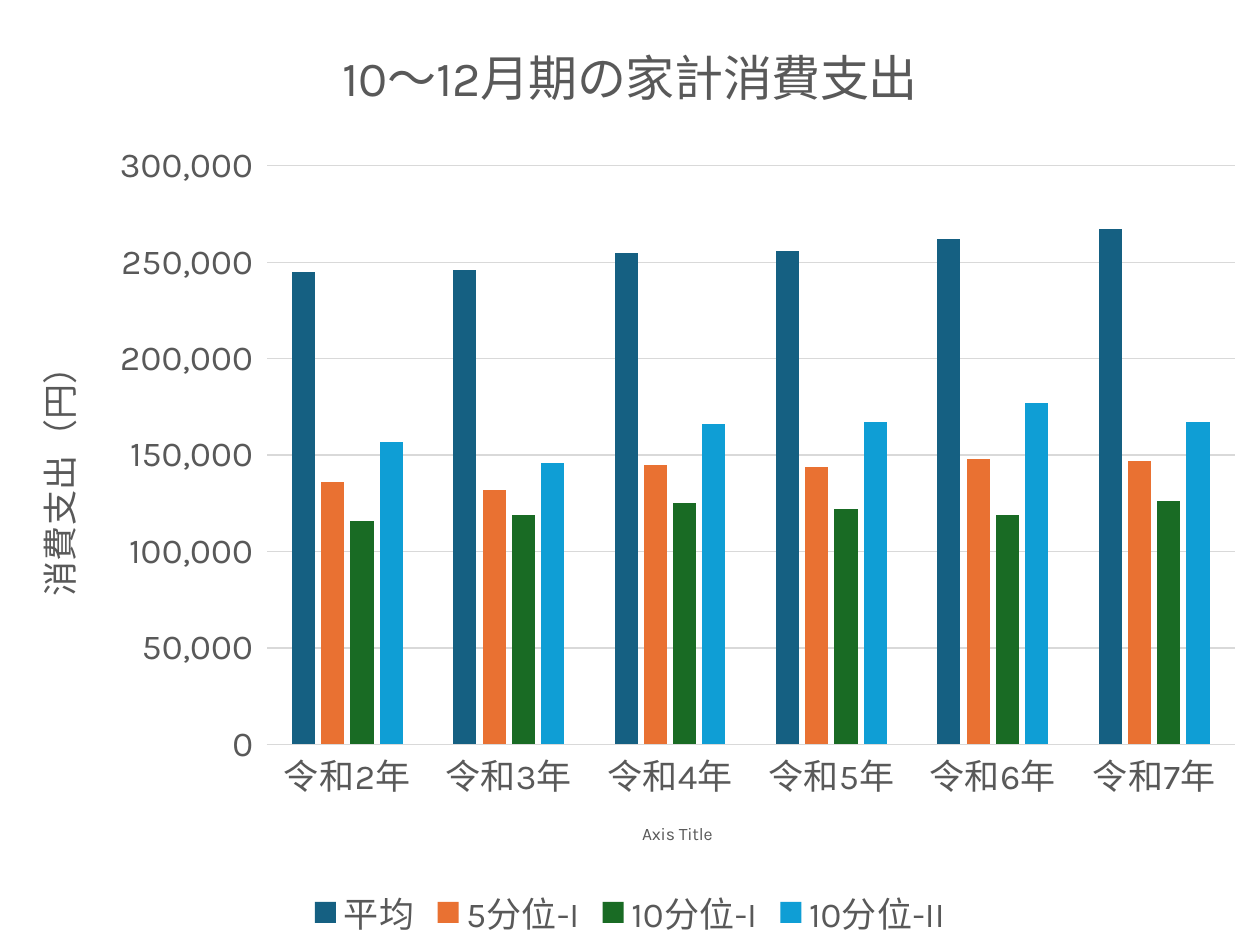
import pptx
import pptx.chart.data
import pptx.dml.color
import pptx.enum.chart
import pptx.util
from pptx.util import Inches

FONT = "Karla"
GRAY = "595959"
GRID = "D9D9D9"
CATEGORIES = [f"令和{year}年" for year in range(2, 8)]
SERIES = [
    ("平均", "156082", [245000, 246000, 255000, 256000, 262000, 267000]),
    ("5分位-I", "E97132", [136000, 132000, 145000, 144000, 148000, 147000]),
    ("10分位-I", "196B24", [116000, 119000, 125000, 122000, 119000, 126000]),
    ("10分位-II", "0F9ED5", [157000, 146000, 166000, 167000, 177000, 167000]),
]


def rgb(color):
    return pptx.dml.color.RGBColor.from_string(color)


def style_font(font, size=20, color=GRAY):
    font.name = FONT
    font.size = pptx.util.Pt(size)
    font.bold = False
    font.color.rgb = rgb(color)


def style_line(line):
    line.color.rgb = rgb(GRID)
    line.width = pptx.util.Pt(0.75)


def set_title(owner, text, **fmt):
    """Give a chart or an axis a formatted title."""
    p = owner.text_frame.paragraphs[0]
    r = p.add_run()
    r.text = text
    style_font(p.font, **fmt)
    style_font(r.font, **fmt)


def add_spending_chart(s, left, top, width, height):
    enums = pptx.enum.chart
    data = pptx.chart.data.CategoryChartData(number_format="#,##0")
    data.categories = CATEGORIES
    for name, _, values in SERIES:
        data.add_series(name, values)
    chart = s.shapes.add_chart(enums.XL_CHART_TYPE.COLUMN_CLUSTERED,
                               left, top, width, height, data).chart
    style_font(chart.font, size=10, color="000000")
    set_title(chart.chart_title, "10〜12月期の家計消費支出", size=28)
    chart.chart_title.include_in_layout = False

    # Columns
    plot = chart.plots[0]
    plot.gap_width = 219
    plot.overlap = -27
    plot.vary_by_categories = False
    for series, (_, color, _) in zip(plot.series, SERIES):
        series.format.fill.solid()
        series.format.fill.fore_color.rgb = rgb(color)

    # Axes
    for axis in (chart.category_axis, chart.value_axis):
        axis.major_tick_mark = enums.XL_TICK_MARK.NONE
        axis.minor_tick_mark = enums.XL_TICK_MARK.NONE
        style_font(axis.tick_labels.font)
    style_line(chart.category_axis.format.line)
    set_title(chart.category_axis.axis_title, "Axis Title", size=10)

    value_axis = chart.value_axis
    value_axis.format.line.fill.background()
    style_line(value_axis.major_gridlines.format.line)
    value_axis.tick_labels.number_format = r"#,##0_);[Red]\(#,##0\)"
    value_axis.tick_labels.number_format_is_linked = False
    set_title(value_axis.axis_title, "消費支出（円）")
    body = value_axis.axis_title.text_frame._txBody.bodyPr
    body.set("rot", "-5400000")
    body.set("vert", "horz")

    # Legend
    chart.has_legend = True
    chart.legend.position = enums.XL_LEGEND_POSITION.BOTTOM
    chart.legend.include_in_layout = False
    style_font(chart.legend.font)


def main():
    prs = pptx.Presentation()
    prs.slide_width, prs.slide_height = Inches(10), Inches(7.5)
    s = prs.slides.add_slide(prs.slide_layouts[6])
    add_spending_chart(s, Inches(0), Inches(0), prs.slide_width, prs.slide_height)
    prs.save("out.pptx")


if __name__ == "__main__":
    main()
